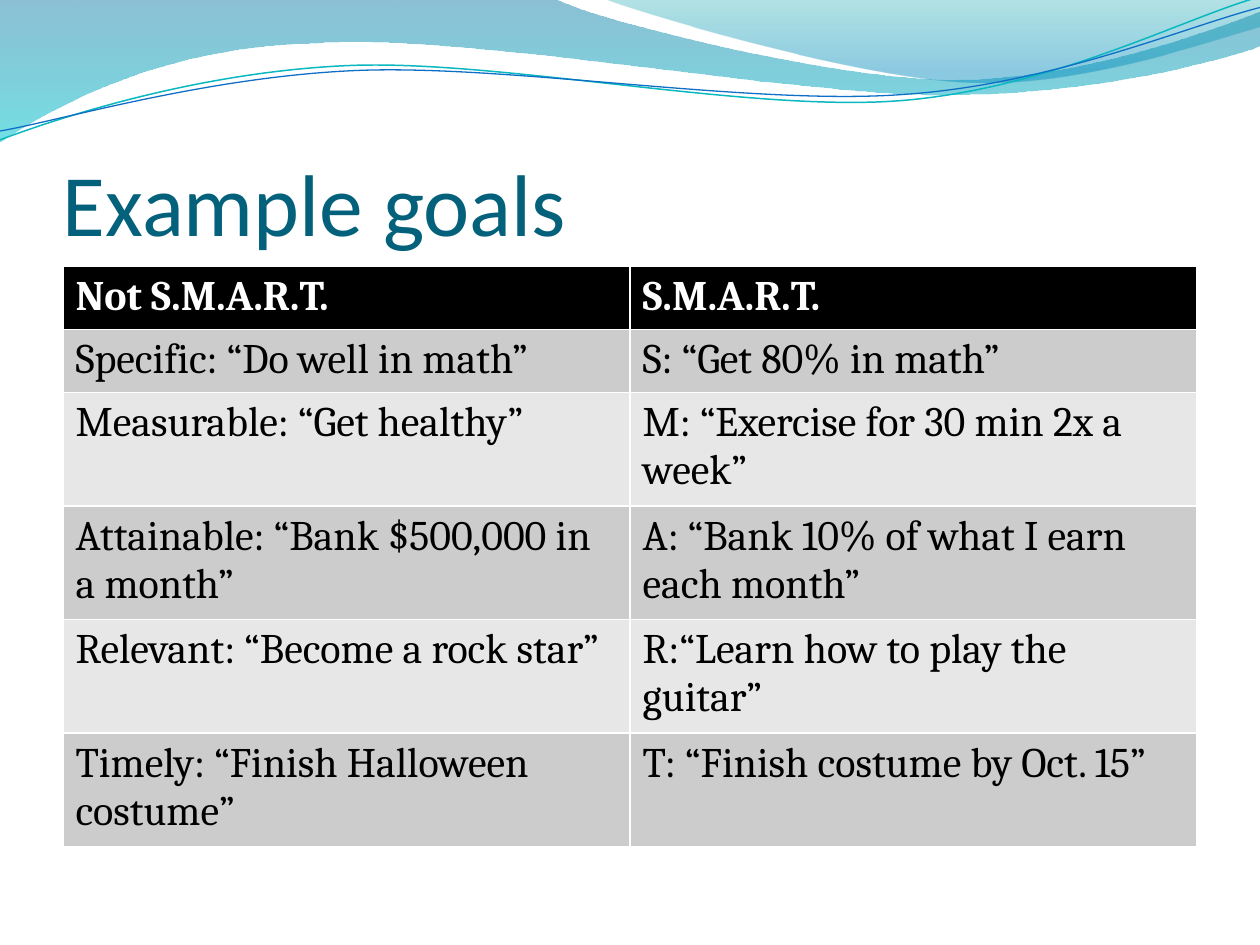
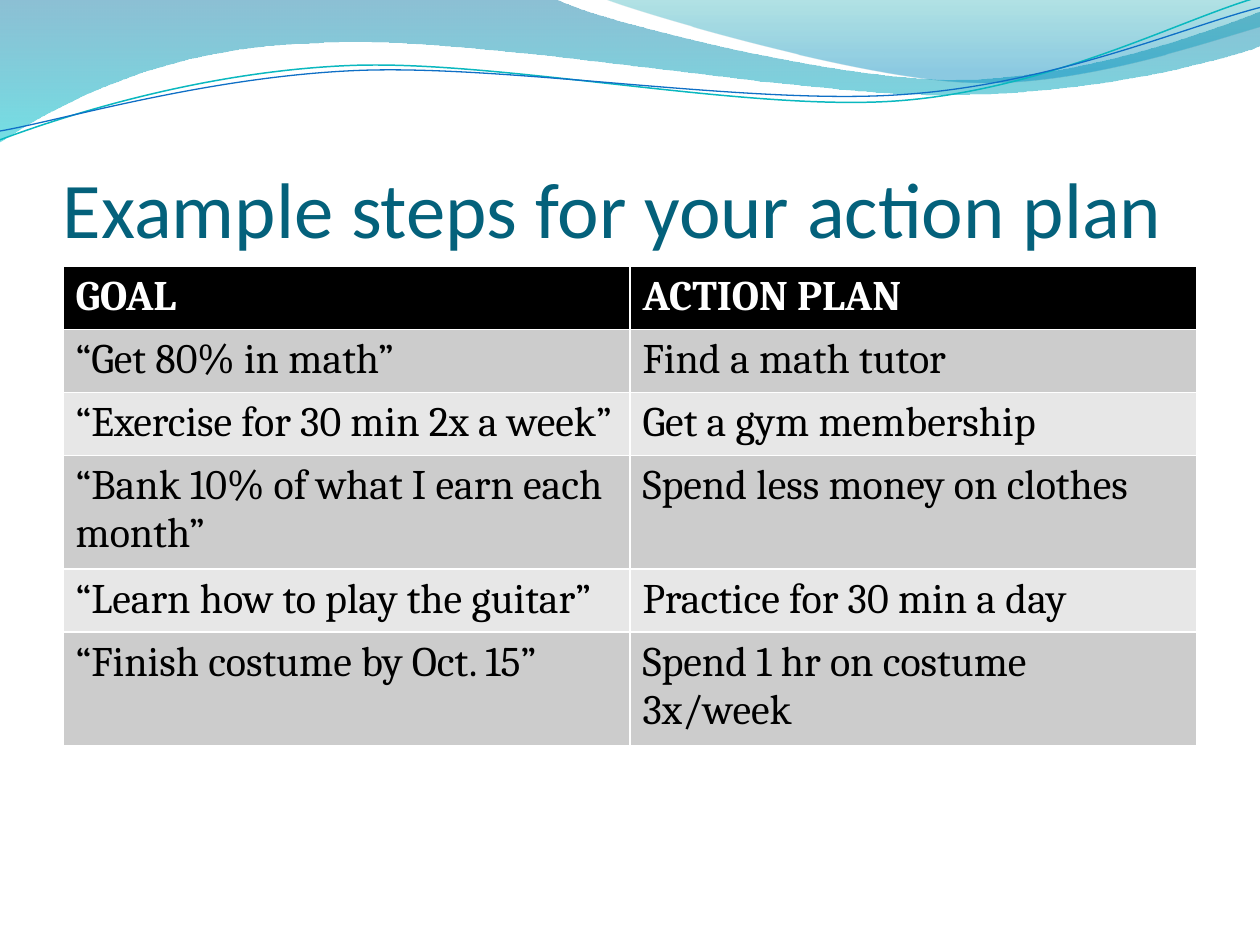
import math

import lxml.etree
import pptx
import pptx.dml.color
import pptx.enum.text
import pptx.oxml.ns
import pptx.util

Cm = pptx.util.Cm
Pt = pptx.util.Pt
qn = pptx.oxml.ns.qn

COLORS = {
    "title": "04617B",
    "header": "000000",
    "header_text": "FFFFFF",
    "body_text": "000000",
    "odd_row": "CCCCCC",
    "even_row": "E7E7E7",
    "band_top": "0074A1",
    "band_bottom": "00C6CF",
    "crest_top": "00A1A9",
    "crest_bottom": "008BBF",
    "teal_line": "0AB8BF",
    "blue_line": "0F6FC6",
}

WAVE_BOX = (0, 0, Cm(25.4))
TITLE_BOX = (Cm(1.27), Cm(1.95), Cm(22.86), Cm(3.18))
TABLE_BOX = (Cm(1.27), Cm(5.37), Cm(22.86))
ROW_HEIGHT = Cm(1.04)
TALL_ROW_HEIGHT = Cm(2.29)
LINE_TILT = -2.7

# Wave points are percentages of the box width.
FILLED_WAVES = [
    {
        "segments": [
            [(0, 0)],
            [(44, -0.1)],
            [(47.6, 1.7), (66.4, 6.3), (75.8, 6.3)],
            [(85.3, 6.3), (95.8, 2.6), (100, 0.9)],
            [(100.1, 3.6)],
            [(98.3, 4.4), (87, 7.6), (74.6, 7.5)],
            [(62.2, 7.5), (38.2, 2.8), (25.7, 3.4)],
            [(12.9, 3.6), (4.6, 8.3), (-0.1, 11.3)],
        ],
        "stops": [(0, "band_top", 45), (1, "band_bottom", 55)],
    },
    {
        "segments": [
            [(47.9, -0.1)],
            [(50.9, 1.1), (68.2, 6.2), (76.9, 6.5)],
            [(85.6, 6.9), (96.1, 3.2), (100, 2.1)],
            [(100, 0)],
        ],
        "stops": [(0, "crest_top", 30), (0.8, "crest_bottom", 45)],
    },
]
LINE_WAVES = [
    {
        "segments": [
            [(0, 11.1)],
            [(4.8, 9.3), (15.8, 5.7), (27.7, 5.2)],
            [(39.5, 4.7), (59.3, 8.9), (71.3, 8)],
            [(83.3, 7.1), (93.8, 1.5), (99.8, -0.2)],
        ],
        "center": (49.9, 5.75),
        "color": "teal_line",
        "width": 0.85,
    },
    {
        "segments": [
            [(0, 10.4)],
            [(4.7, 9.6), (16.4, 6.1), (28.3, 5.6)],
            [(40.3, 5.1), (59.7, 8.4), (71.7, 7.5)],
            [(83.6, 6.7), (94.1, 2.1), (100, 0.6)],
        ],
        "center": (50, 5.9),
        "color": "blue_line",
        "width": 0.75,
    },
]

TITLE_FONT = {"name": "Calibri", "bold": False}
HEADER_FONT = {"name": "Cambria", "size": Pt(24), "bold": True}
BODY_FONT = {**HEADER_FONT, "bold": False}

SLIDES = [
    {
        "title": "Example goals",
        "title_size": 50,
        "rows": [
            ("Not S.M.A.R.T.", "S.M.A.R.T."),
            ("Specific: “Do well in math”", "S: “Get 80% in math”"),
            ("Measurable: “Get healthy”", "M: “Exercise for 30 min 2x a week”"),
            ("Attainable: “Bank $500,000 in a month”", "A: “Bank 10% of what I earn each month”"),
            ("Relevant: “Become a rock star”", "R:“Learn how to play the guitar”"),
            ("Timely: “Finish Halloween costume”", "T: “Finish costume by Oct. 15”"),
        ],
        "tall_rows": {2},
        "table_height": Cm(11.68),
    },
    {
        "title": "Example steps for your action plan",
        "title_size": 45,
        "rows": [
            ("GOAL", "ACTION PLAN"),
            ("“Get 80% in math”", "Find a math tutor"),
            ("“Exercise for 30 min 2x a week”", "Get a gym membership"),
            ("“Bank 10% of what I earn each month”", "Spend less money on clothes"),
            ("“Learn how to play the guitar”", "Practice for 30 min a day"),
            ("“Finish costume by Oct. 15”", "Spend 1 hr on costume 3x/week"),
        ],
        "tall_rows": set(),
        "table_height": Cm(10.67),
    },
]


def rgb(name):
    return pptx.dml.color.RGBColor.from_string(COLORS[name])


def apply_format(target, values):
    for attribute, value in values.items():
        setattr(target, attribute, value)


def write_text(paragraph, text, font_values, color):
    run = paragraph.add_run()
    run.text = text
    apply_format(run.font, font_values)
    run.font.color.rgb = rgb(color)


def rotate(point, center, degrees):
    angle = math.radians(degrees)
    x, y = point[0] - center[0], point[1] - center[1]
    return (
        center[0] + x * math.cos(angle) - y * math.sin(angle),
        center[1] + x * math.sin(angle) + y * math.cos(angle),
    )


def bend_segments(shape, segments):
    line_elements = iter(list(shape._element.iter(qn("a:lnTo"))))
    for segment in segments[1:]:
        elements = [next(line_elements) for _ in segment]
        if len(segment) == 3:
            curve = lxml.etree.Element(qn("a:cubicBezTo"))
            elements[0].addprevious(curve)
            for element in elements:
                curve.append(element[0])
                element.getparent().remove(element)


def add_wave(slide, box, segments, close):
    left, top, width = box
    points = [
        (left + x * width / 100, top + y * width / 100)
        for segment in segments
        for x, y in segment
    ]
    builder = slide.shapes.build_freeform(*points[0])
    builder.add_line_segments(points[1:], close=close)
    shape = builder.convert_to_shape()
    bend_segments(shape, segments)
    shape.shadow.inherit = False
    return shape


def add_filled_wave(slide, box, wave):
    shape = add_wave(slide, box, wave["segments"], True)
    shape.line.fill.background()
    shape.fill.gradient()
    shape.fill.gradient_angle = 270
    for stop, (position, color, _) in zip(shape.fill.gradient_stops, wave["stops"]):
        stop.position = position
        stop.color.rgb = rgb(color)
    color_elements = list(shape._element.spPr.iter(qn("a:srgbClr")))
    for element, (_, _, opacity) in zip(color_elements, wave["stops"]):
        lxml.etree.SubElement(element, qn("a:alpha"), val=str(opacity * 1000))


def add_line_wave(slide, box, wave):
    level_segments = [
        [rotate(point, wave["center"], -LINE_TILT) for point in segment]
        for segment in wave["segments"]
    ]
    shape = add_wave(slide, box, level_segments, False)
    shape.rotation = LINE_TILT
    shape.fill.background()
    shape.line.color.rgb = rgb(wave["color"])
    shape.line.width = Pt(wave["width"])


def add_wave_header(slide, box):
    for wave in FILLED_WAVES:
        add_filled_wave(slide, box, wave)
    for wave in LINE_WAVES:
        add_line_wave(slide, box, wave)


def add_title(slide, box, text, size):
    frame = slide.shapes.add_textbox(*box).text_frame
    apply_format(frame, {
        "word_wrap": True,
        "vertical_anchor": pptx.enum.text.MSO_ANCHOR.BOTTOM,
        "margin_left": 0,
        "margin_top": Cm(0.13),
        "margin_right": 0,
        "margin_bottom": 0,
    })
    write_text(frame.paragraphs[0], text, {**TITLE_FONT, "size": Pt(size)}, "title")


def add_goal_table(slide, box, rows, tall_rows, height):
    frame = slide.shapes.add_table(len(rows), len(rows[0]), *box, height)
    table = frame.table
    for row_index, texts in enumerate(rows):
        table.rows[row_index].height = TALL_ROW_HEIGHT if row_index in tall_rows else ROW_HEIGHT
        if row_index == 0:
            fill, font_values, text_color = "header", HEADER_FONT, "header_text"
        else:
            fill = "odd_row" if row_index % 2 else "even_row"
            font_values, text_color = BODY_FONT, "body_text"
        for column_index, text in enumerate(texts):
            cell = table.cell(row_index, column_index)
            cell.fill.solid()
            cell.fill.fore_color.rgb = rgb(fill)
            write_text(cell.text_frame.paragraphs[0], text, font_values, text_color)
    frame.height = height


def add_table_slide(presentation, content):
    slide = presentation.slides.add_slide(presentation.slide_layouts[6])
    add_wave_header(slide, WAVE_BOX)
    add_title(slide, TITLE_BOX, content["title"], content["title_size"])
    add_goal_table(slide, TABLE_BOX, content["rows"], content["tall_rows"], content["table_height"])


def main():
    presentation = pptx.Presentation()
    presentation.slide_width = Cm(25.4)
    presentation.slide_height = Cm(19.05)
    for content in SLIDES:
        add_table_slide(presentation, content)
    presentation.save("out.pptx")


if __name__ == "__main__":
    main()
